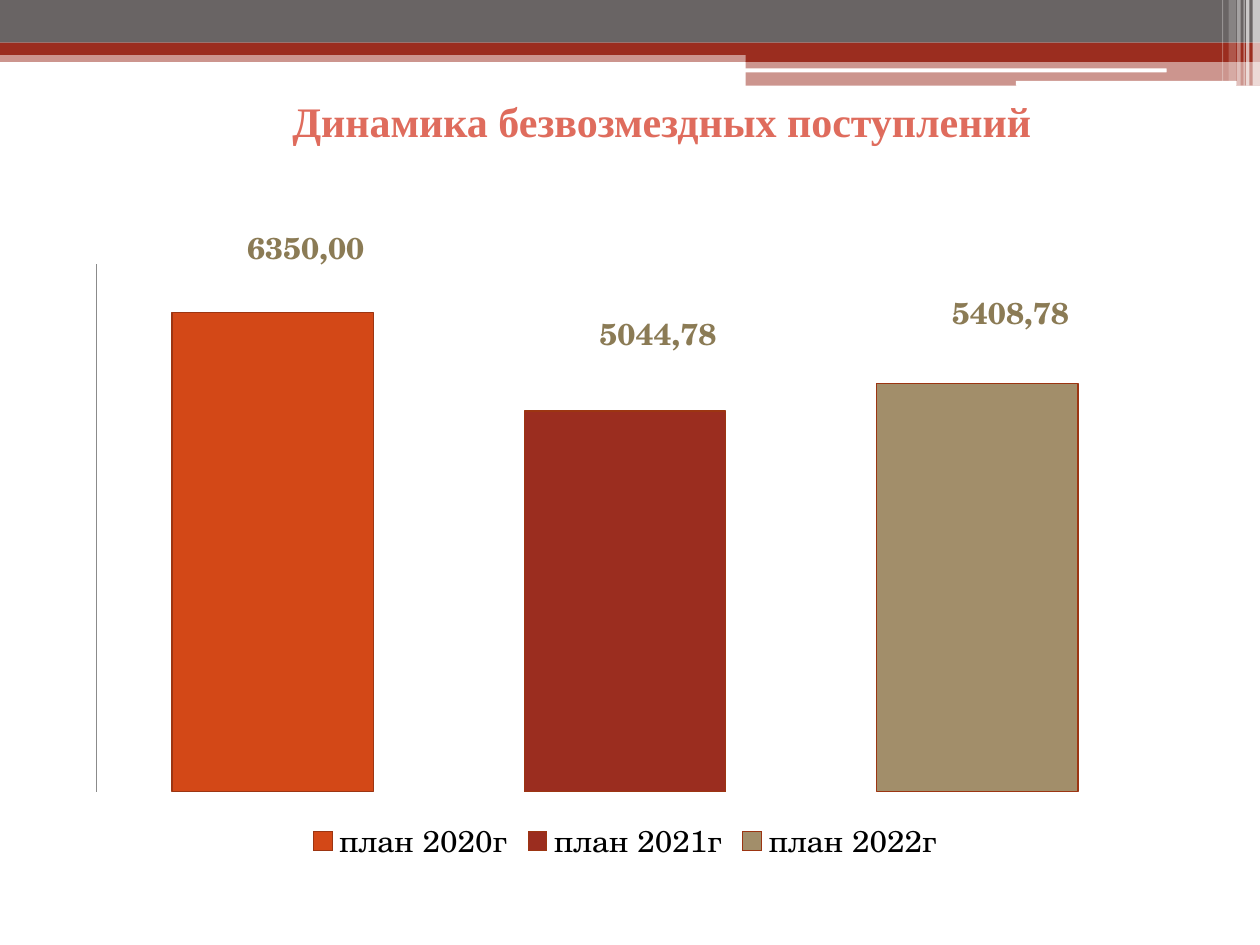
"""Build a slide with a column chart of gratuitous receipts by year."""
from lxml import etree
from pptx import Presentation
from pptx.chart.data import CategoryChartData
from pptx.dml.color import RGBColor
from pptx.enum.chart import XL_CHART_TYPE, XL_LABEL_POSITION, XL_LEGEND_POSITION, XL_TICK_LABEL_POSITION, XL_TICK_MARK
from pptx.enum.shapes import MSO_SHAPE
from pptx.enum.text import MSO_ANCHOR, PP_ALIGN
from pptx.oxml.ns import qn
from pptx.util import Cm, Pt

RECT = MSO_SHAPE.RECTANGLE
ROUND = MSO_SHAPE.ROUNDED_RECTANGLE
COLUMNS = XL_CHART_TYPE.COLUMN_CLUSTERED
BOTTOM = XL_LEGEND_POSITION.BOTTOM
OUTSIDE = XL_LABEL_POSITION.OUTSIDE_END
NO_LABELS = XL_TICK_LABEL_POSITION.NONE
NO_TICKS = XL_TICK_MARK.NONE
MIDDLE = MSO_ANCHOR.MIDDLE
CENTER = PP_ALIGN.CENTER

GREY, RED, WHITE = "696464", "9B2D1F", "FFFFFF"
CHART_FONT = "TeX Gyre Schola"


def paint(color_format, color):
    color_format.rgb = RGBColor.from_string(color)


def shift_label(label_node, x, y):
    layout = etree.Element(qn("c:layout"))
    manual = etree.SubElement(layout, qn("c:manualLayout"))
    etree.SubElement(manual, qn("c:x"), val=str(x))
    etree.SubElement(manual, qn("c:y"), val=str(y))
    label_node.insert(1, layout)


deck = Presentation()
deck.slide_width, deck.slide_height = Cm(25.4), Cm(19.05)
page = deck.slides.add_slide(deck.slide_layouts[6])

bands = [
    (RECT, 0, 1.02, 25.4, 0.23, RED, 50),
    (RECT, 0, 0, 25.4, 0.86, GREY, 100),
    (RECT, 0, 0.86, 25.4, 0.25, RED, 100),
    (RECT, 15.03, 1, 10.37, 0.25, RED, 100),
    (RECT, 15.03, 1.23, 10.37, 0.5, RED, 50),
    (ROUND, 15.01, 1.38, 8.51, 0.08, WHITE, 100),
    (ROUND, 20.48, 1.63, 4.45, 0.1, WHITE, 100),
]
stripes = [
    (25.25, 0.15, 1.73, 65),
    (25.12, 0.07, 1.73, 65),
    (25.07, 0.02, 1.73, 60),
    (24.94, 0.07, 1.73, 40),
    (24.77, 0.15, 1.63, 20),
    (24.64, 0.02, 1.63, 30),
]
bands += [(RECT, left, 0, width, height, WHITE, alpha) for left, width, height, alpha in stripes]
for kind, left, top, width, height, color, alpha in bands:
    band = page.shapes.add_shape(kind, Cm(left), Cm(top), Cm(width), Cm(height))
    band.shadow.inherit = False
    band.line.fill.background()
    band.fill.solid()
    paint(band.fill.fore_color, color)
    if alpha < 100:
        fill_color = band.fill._xPr.find(f"{qn('a:solidFill')}/{qn('a:srgbClr')}")
        etree.SubElement(fill_color, qn("a:alpha"), val=str(alpha * 1000))

title = page.shapes.add_textbox(Cm(1.5), Cm(1.54), Cm(22.63), Cm(1.8)).text_frame
title.word_wrap = True
title.vertical_anchor = MIDDLE
title.margin_left = Cm(1.3)
para = title.paragraphs[0]
para.text = "Динамика безвозмездных поступлений"
para.alignment = CENTER
para.font.name, para.font.size, para.font.bold = "Times New Roman", Pt(24), True
paint(para.font.color, "DF6C5D")

data = CategoryChartData(number_format="0.00")
data.categories = ["план 2020г", "план 2021г", "план 2022г"]
data.add_series("Series 1", [6350, 5044.78, 5408.78])
chart = page.shapes.add_chart(COLUMNS, Cm(1.5), Cm(4.52), Cm(22.2), Cm(13), data).chart
chart.has_title = False
chart.font.name, chart.font.size = CHART_FONT, Pt(18)
paint(chart.font.color, "000000")
chart.has_legend = True
chart.legend.position = BOTTOM
chart.legend.include_in_layout = False
chart.category_axis.visible = False
value_axis = chart.value_axis
value_axis.minimum_scale, value_axis.maximum_scale = 0, 7000
value_axis.has_major_gridlines = False
value_axis.major_tick_mark = NO_TICKS
value_axis.tick_label_position = NO_LABELS
value_axis.format.line.width = Pt(0.75)
paint(value_axis.format.line.color, "8B8B8B")

plot = chart.plots[0]
plot.gap_width = 75
plot.vary_by_categories = True
series = plot.series[0]
series.data_labels.show_value = True
points = [("D34817", "6350,00", -0.06), ("9B2D1F", "5044,78", -0.08), ("A28E6A", "5408,78", -0.07)]
for index, (color, caption, rise) in enumerate(points):
    point = series.points[index]
    point.format.fill.solid()
    paint(point.format.fill.fore_color, color)
    point.format.line.width = Pt(0.75)
    paint(point.format.line.color, "9C3512")
    label = point.data_label
    span = label.text_frame.paragraphs[0].add_run()
    span.text = caption
    span.font.name, span.font.size, span.font.bold = CHART_FONT, Pt(18), True
    paint(span.font.color, "8B7B55")
    label.position = OUTSIDE
    label_node = series._element.findall(f"{qn('c:dLbls')}/{qn('c:dLbl')}")[index]
    shift_label(label_node, 0.03, rise)
for leader in series._element.iter(qn("c:showLeaderLines")):
    leader.set("val", "0")

deck.save("out.pptx")
